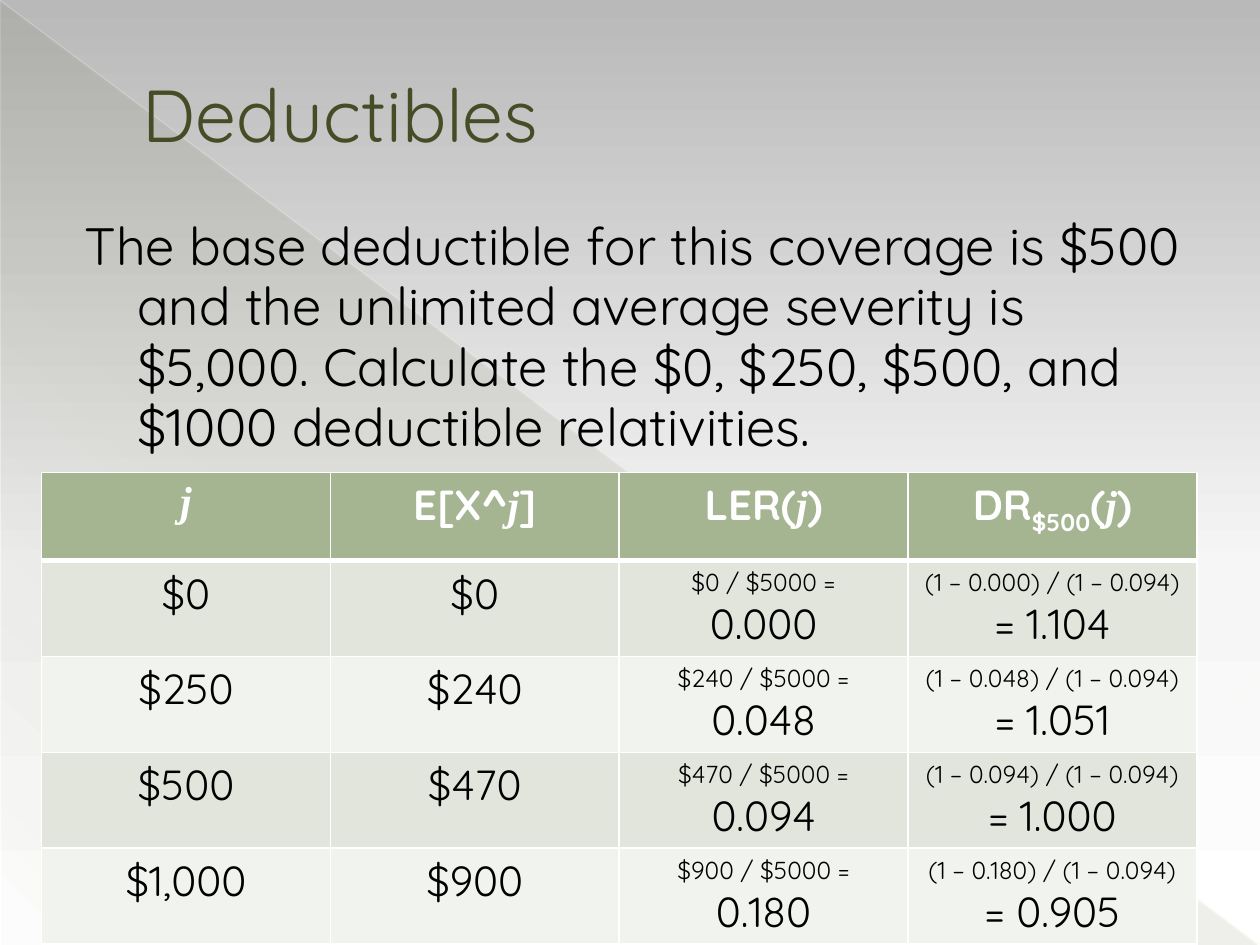
from lxml import etree
from pptx import Presentation
from pptx import util as u
from pptx.dml.color import RGBColor
from pptx.enum import shapes, text
from pptx.oxml import parse_xml
from pptx.oxml.ns import nsdecls, qn

WIDE, HIGH = u.Inches(10), u.Inches(7.5)
SANS, SERIF = "Quicksand", "Times New Roman"
OLIVE = RGBColor(0x44, 0x4D, 0x26)
BLACK = RGBColor(0, 0, 0)
WHITE = RGBColor(0xFF, 0xFF, 0xFF)
SAGE = RGBColor(0xA5, 0xB5, 0x92)
BANDS = RGBColor(0xE1, 0xE5, 0xDC), RGBColor(0xF0, 0xF3, 0xEE)
CREAM = RGBColor(0xFF, 0xFD, 0xE3)
GREYS = [(0, RGBColor(0xB9, 0xB9, 0xB9), 100),
         (60, RGBColor(0xF6, 0xF6, 0xF6), 100), (100, WHITE, 100)]
SHADE = [(0, OLIVE, 10), (70, OLIVE, 8), (100, OLIVE, 1)]

HEADS = ["j"], ["E[X^", "j", "]"], ["LER(", "j", ")"], ["DR", "_$500", "(", "j", ")"]
LIMITED = {0: 0, 250: 240, 500: 470, 1000: 900}
MEAN, BASE = 5000, 500
TASK = ("The base deductible for this coverage is $500 and the unlimited "
        "average severity is $5,000. Calculate the $0, $250, $500, and "
        "$1000 deductible relativities.")


def blend(fill, stops, angle):
    """Give a fill a gradient of (percent, colour, opacity) stops."""
    fill.gradient()
    grad = fill._fill._gradFill
    marks = "".join(
        f'<a:gs pos="{pos * 1000}"><a:srgbClr val="{tint}">'
        f'<a:alpha val="{alpha * 1000}"/></a:srgbClr></a:gs>'
        for pos, tint, alpha in stops)
    for part in list(grad):
        grad.remove(part)
    grad.append(parse_xml(f'<a:gsLst {nsdecls("a")}>{marks}</a:gsLst>'))
    grad.append(parse_xml(
        f'<a:lin {nsdecls("a")} ang="{angle * 60000}" scaled="0"/>'))


def style(para, size, tint, name=SANS, bold=False):
    font = para.font
    font.size, font.color.rgb, font.name, font.bold = u.Pt(size), tint, name, bold


def ray(slide, start, end, width, alpha):
    """Draw a pale line between two points given as shares of the slide."""
    (x1, y1), (x2, y2) = start, end
    line = slide.shapes.add_connector(
        shapes.MSO_CONNECTOR.STRAIGHT, int(WIDE * x1), int(HIGH * y1),
        int(WIDE * x2), int(HIGH * y2))
    line.line.color.rgb, line.line.width = CREAM, u.Pt(width)
    tint = line._element.spPr.find(".//" + qn("a:srgbClr"))
    etree.SubElement(tint, qn("a:alpha")).set("val", str(alpha * 1000))
    etree.SubElement(line._element.spPr, qn("a:effectLst"))
    return line


def backdrop(slide):
    blend(slide.background.fill, GREYS, 90)
    wedge = slide.shapes.add_shape(
        shapes.MSO_SHAPE.RIGHT_TRIANGLE, u.Inches(0.01), u.Inches(0.02),
        u.Inches(9.98), u.Inches(7.48))
    wedge.shadow.inherit = False
    wedge.line.fill.background()
    blend(wedge.fill, SHADE, 133)
    parts = [wedge, ray(slide, (0, 0), (1, 1), 0.39, 35),
             ray(slide, (1, 0.72), (0.71, 1), 0.47, 45)]
    for spot, part in enumerate(parts, 2):
        slide.shapes._spTree.insert(spot, part._element)


def fill_holder(shape, box, words, size, tint, left, indent):
    """Place a placeholder and set its one unbulleted paragraph."""
    shape.left, shape.top, shape.width, shape.height = map(u.Inches, box)
    frame = shape.text_frame
    frame.text, frame.auto_size = words, text.MSO_AUTO_SIZE.NONE
    para = frame.paragraphs[0]
    para.alignment = text.PP_ALIGN.LEFT
    style(para, size, tint)
    props = para._p.get_or_add_pPr()
    props.set("marL", str(u.Inches(left)))
    props.set("indent", str(u.Inches(indent)))
    props.insert_element_before(
        parse_xml(f'<a:buNone {nsdecls("a")}/>'), "a:tabLst", "a:defRPr")
    return para


def paint(cell, tint, under=1):
    """Fill a cell and rule it in white, the lower side at its own weight."""
    cell.fill.solid()
    cell.fill.fore_color.rgb = tint
    for spot, (side, width) in enumerate(zip("LRTB", (1, 1, 1, under))):
        cell._tc.get_or_add_tcPr().insert(spot, parse_xml(
            f'<a:ln{side} {nsdecls("a")} w="{u.Pt(width)}"><a:solidFill>'
            f'<a:srgbClr val="{WHITE}"/></a:solidFill></a:ln{side}>'))


def head(cell, parts):
    """Write a heading: j is a variable, a leading _ marks a subscript."""
    paint(cell, SAGE, 3)
    para = cell.text_frame.paragraphs[0]
    para.alignment = text.PP_ALIGN.CENTER
    style(para, 24, WHITE, SERIF if parts == ["j"] else SANS, True)
    for part in parts:
        run = para.add_run()
        run.text = part.lstrip("_")
        run.font.italic = part == "j"
        run.font.name = SERIF if part == "j" else SANS
        if part.startswith("_"):
            run.font._element.set("baseline", "-25000")


def entry(cell, lines, tint):
    paint(cell, tint)
    cell.text_frame.text = "\n".join(lines)
    for para in cell.text_frame.paragraphs:
        para.alignment = text.PP_ALIGN.CENTER
        style(para, 24, BLACK)
    if len(lines) > 1:
        cell.text_frame.paragraphs[0].font.size = u.Pt(14)


def ratios(slide, box):
    """Tabulate loss elimination ratios and deductible relativities."""
    grid = slide.shapes.add_table(
        len(LIMITED) + 1, len(HEADS), *map(u.Inches, box)).table
    for cell, parts in zip(grid.rows[0].cells, HEADS):
        head(cell, parts)
    base = LIMITED[BASE] / MEAN
    for num, (ded, loss) in enumerate(LIMITED.items()):
        ler = loss / MEAN
        row = ([f"${ded:,}"], [f"${loss}"],
               [f"${loss} / ${MEAN} =", f"{ler:.3f}"],
               [f"(1 – {ler:.3f}) / (1 – {base:.3f})",
                f"= {(1 - ler) / (1 - base):.3f}"])
        for cell, lines in zip(grid.rows[num + 1].cells, row):
            entry(cell, lines, BANDS[num % 2])


def main():
    deck = Presentation()
    deck.slide_width, deck.slide_height = WIDE, HIGH
    slide = deck.slides.add_slide(deck.slide_layouts[1])
    backdrop(slide)
    title, body = slide.placeholders
    fill_holder(title, (0.5, 0.29, 9, 1.21), "Deductibles", 42, OLIVE, 0.53, 0)
    title.text_frame.vertical_anchor = text.MSO_ANCHOR.MIDDLE
    task = fill_holder(body, (0.5, 1.67, 9, 5.08), TASK, 30, BLACK, 0.49, -0.42)
    task.line_spacing = 0.96
    ratios(slide, (0.33, 3.75, 9.17, 3.5))
    deck.save("out.pptx")


if __name__ == "__main__":
    main()
